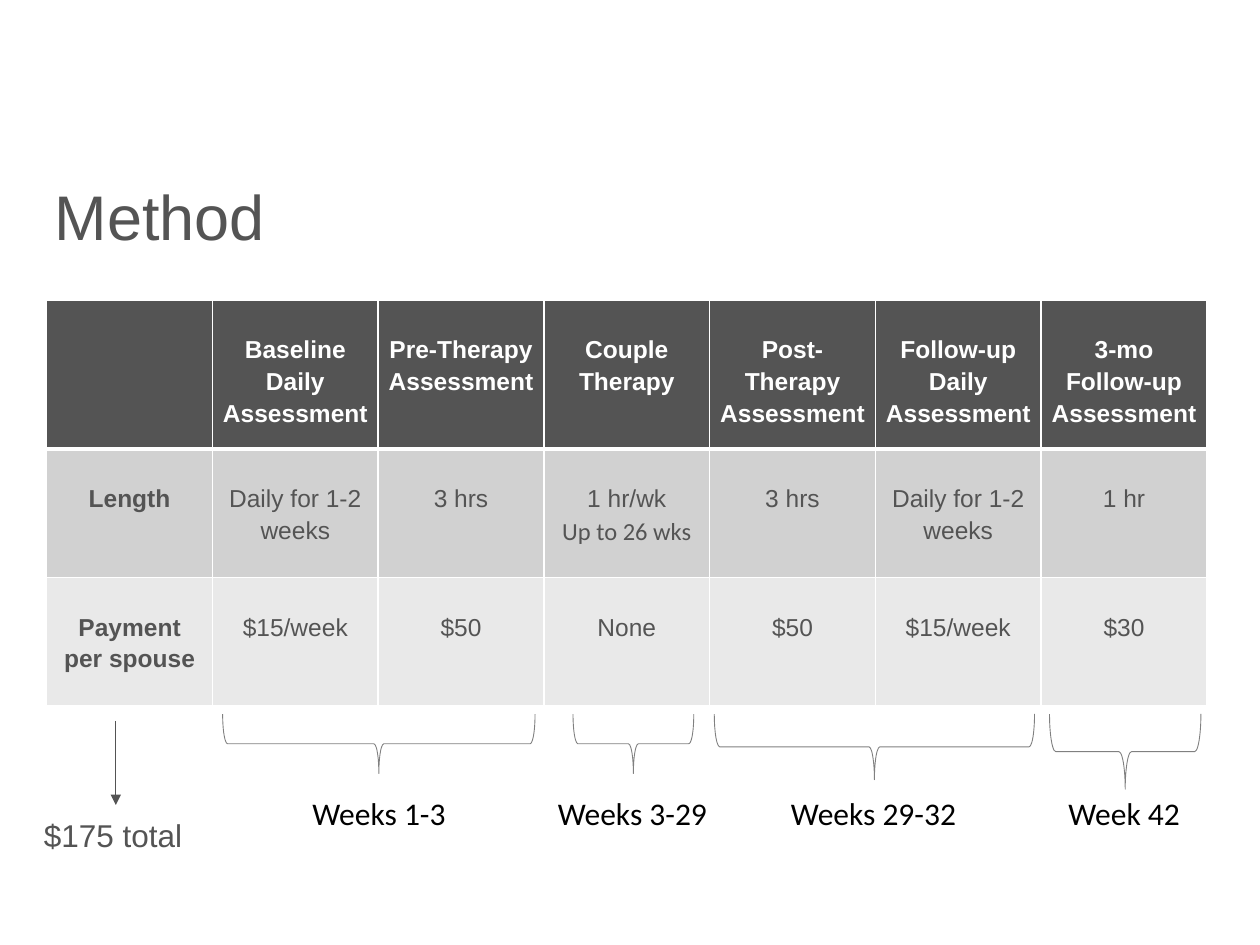
from pptx import Presentation
from pptx.util import Pt
from pptx.dml.color import RGBColor
from pptx.enum.shapes import MSO_SHAPE as SHAPE, MSO_CONNECTOR as CONN
from pptx.enum.text import PP_ALIGN as ALIGN, MSO_ANCHOR as ANCHOR
from pptx.oxml.ns import qn
from lxml.etree import SubElement

DARK, WHITE, BLACK, GREY = "545454", "FFFFFF", "000000", "808080"


def rgb(color):
    return RGBColor.from_string(color)


def add_run(p, text, size, font="Arial", color=DARK, bold=False):
    r = p.add_run()
    r.text = text
    r.font.size, r.font.name, r.font.bold = Pt(size), font, bold
    r.font.color.rgb = rgb(color)


prs = Presentation()
prs.slide_width, prs.slide_height = Pt(720), Pt(540)
s = prs.slides.add_slide(prs.slide_layouts[5])

# Title
title = s.shapes.title
title.left, title.top, title.width, title.height = Pt(24), Pt(96), Pt(642), Pt(60)
tf = title.text_frame
tf.word_wrap = True
tf.vertical_anchor = ANCHOR.MIDDLE
p = tf.paragraphs[0]
p.alignment = ALIGN.LEFT
p.line_spacing = 0.9
add_run(p, "Method", 36)

# Schedule table: one tuple of paragraphs per cell
rows = [
    [(), ("Baseline Daily", "Assessment"), ("Pre-Therapy Assessment",), ("Couple Therapy",),
     ("Post-Therapy Assessment",), ("Follow-up Daily Assessment",),
     ("3-mo", "Follow-up", "Assessment")],
    [("Length",), ("Daily for 1-2 weeks",), ("3 hrs",), ("1 hr/wk", "Up to 26 wks"),
     ("3 hrs",), ("Daily for 1-2 weeks",), ("1 hr",)],
    [("Payment per spouse",), ("$15/week",), ("$50",), ("None",),
     ("$50",), ("$15/week",), ("$30",)],
]
row_heights = [85, 73.5, 73.5]
row_fills = [DARK, "D1D1D1", "E9E9E9"]
table = s.shapes.add_table(3, 7, Pt(26.7), Pt(171.6), Pt(663), Pt(232)).table
for col in table.columns:
    col.width = Pt(94.73)
for i, row in enumerate(rows):
    table.rows[i].height = Pt(row_heights[i])
    for j, lines in enumerate(row):
        cell = table.cell(i, j)
        cell.margin_left = cell.margin_right = Pt(5.4)
        cell.margin_top, cell.margin_bottom = Pt(18.4), 0
        for n, line in enumerate(lines):
            tf = cell.text_frame
            p = tf.add_paragraph() if n else tf.paragraphs[0]
            p.alignment = ALIGN.CENTER
            p.line_spacing = 1.15
            add_run(p, line, 14, "Calibri" if line.startswith("Up to") else "Arial",
                    DARK if i else WHITE, i == 0 or j == 0)
        # White borders, heavier under the header
        tc_pr = cell._tc.get_or_add_tcPr()
        for side in ("lnL", "lnR", "lnT", "lnB"):
            heavy = (i, side) in ((0, "lnB"), (1, "lnT"))
            ln = SubElement(tc_pr, qn("a:" + side), w=str(Pt(3 if heavy else 1)))
            SubElement(SubElement(ln, qn("a:solidFill")), qn("a:srgbClr"), val=WHITE)
        cell.fill.solid()
        cell.fill.fore_color.rgb = rgb(row_fills[i])

# Braces with week labels: text, centre, brace span, brace depth, label width
periods = [
    ("Weeks 1-3", 216.5, 178.5, 34, 91.5),
    ("Weeks 3-29", 362, 69, 34, 102),
    ("Weeks 29-32", 499.7, 183, 37.5, 111),
    ("Week 42", 643, 86.5, 43, 80.5),
]
brace_top = 408
for text, x, span, depth, width in periods:
    y = brace_top + depth / 2
    sp = s.shapes.add_shape(SHAPE.LEFT_BRACE, Pt(x - depth / 2), Pt(y - span / 2),
                            Pt(depth), Pt(span))
    sp.rotation = 270
    sp.shadow.inherit = False
    sp.fill.background()
    sp.line.color.rgb = rgb(GREY)
    sp.line.width = Pt(0.5)
    tb = s.shapes.add_textbox(Pt(x + 0.7 - width / 2), Pt(450), Pt(width), Pt(29))
    add_run(tb.text_frame.paragraphs[0], text, 18, "Calibri", BLACK)

# Arrow to the payment total
arrow = s.shapes.add_connector(CONN.STRAIGHT, Pt(66.2), Pt(412), Pt(66.2), Pt(460))
arrow.line.color.rgb = rgb(DARK)
arrow.line.width = Pt(0.75)
SubElement(arrow.line._get_or_add_ln(), qn("a:tailEnd"), type="triangle")
SubElement(arrow._element.spPr, qn("a:effectLst"))
tb = s.shapes.add_textbox(Pt(18), Pt(463), Pt(100), Pt(29))
add_run(tb.text_frame.paragraphs[0], "$175 total", 18)

prs.save("out.pptx")
